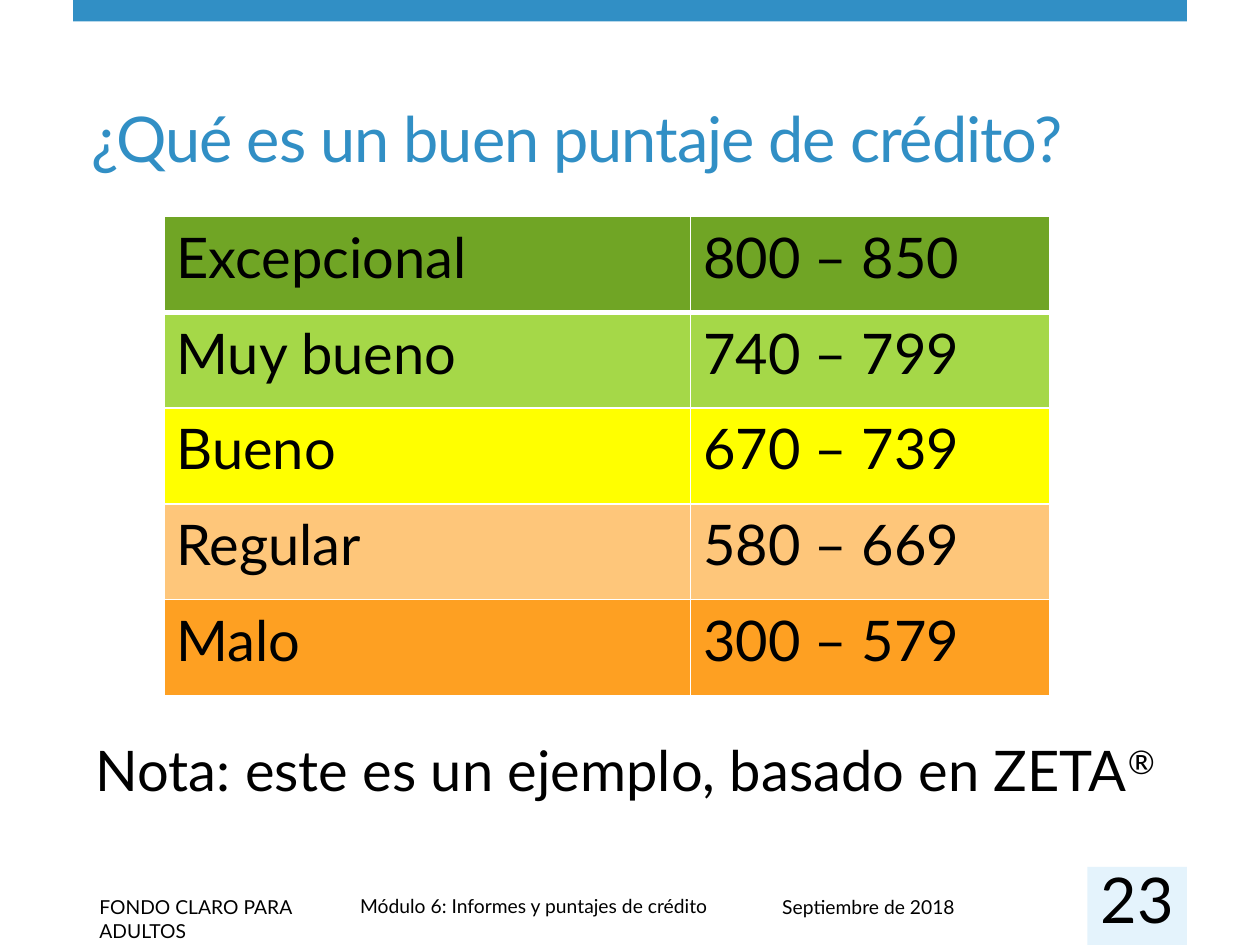
from lxml.etree import SubElement as Sub
from pptx import Presentation
from pptx.dml.color import RGBColor as RGB
from pptx.enum.shapes import MSO_SHAPE as Shape
from pptx.enum.text import MSO_ANCHOR as Anchor, PP_ALIGN as Align
from pptx.oxml.ns import qn
from pptx.util import Inches, Pt

BLACK = RGB(0x00, 0x00, 0x00)
BLUE = RGB(0x31, 0x8F, 0xC5)
PALE = RGB(0xE4, 0xF3, 0xFC)
GREEN = RGB(0x70, 0xA5, 0x25)
LIME = RGB(0xA5, 0xD8, 0x48)
YELLOW = RGB(0xFF, 0xFF, 0x00)
PEACH = RGB(0xFE, 0xC6, 0x7A)
ORANGE = RGB(0xFE, 0xA0, 0x22)

SCORES = [
    ("Excepcional", "800 – 850", GREEN),
    ("Muy bueno", "740 – 799", LIME),
    ("Bueno", "670 – 739", YELLOW),
    ("Regular", "580 – 669", PEACH),
    ("Malo", "300 – 579", ORANGE),
]


class Page:
    font = "Lato"

    def __init__(self, slide):
        self.slide = slide

    def style(self, run, size, color=BLACK):
        run.font.name = self.font
        run.font.size = Pt(size)
        run.font.color.rgb = color

    def rect(self, x, y, w, h, color):
        box = self.slide.shapes.add_shape(
            Shape.RECTANGLE, Inches(x), Inches(y), Inches(w), Inches(h))
        box.shadow.inherit = False
        box.fill.solid()
        box.fill.fore_color.rgb = color
        box.line.fill.background()

    def text(self, x, y, w, h, words, size, color=BLACK):
        box = self.slide.shapes.add_textbox(
            Inches(x), Inches(y), Inches(w), Inches(h))
        frame = box.text_frame
        frame.word_wrap = True
        frame.text = words
        self.style(frame.paragraphs[0].runs[0], size, color)
        return frame

    def edge(self, cell, side, width):
        line = Sub(cell._tc.get_or_add_tcPr(), qn("a:ln" + side),
                   w=str(Pt(width)))
        fill = Sub(line, qn("a:solidFill"))
        Sub(fill, qn("a:srgbClr"), val="FFFFFF")

    def table(self, x, y, cols, high, rows, size):
        grid = self.slide.shapes.add_table(
            len(rows), len(cols), Inches(x), Inches(y),
            Inches(sum(cols)), Inches(high * len(rows))).table
        for col, wide in zip(grid.columns, cols):
            col.width = Inches(wide)
        for r, (*words, color) in enumerate(rows):
            grid.rows[r].height = Inches(high)
            for c, word in enumerate(words):
                cell = grid.cell(r, c)
                cell.text = word
                run = cell.text_frame.paragraphs[0].runs[0]
                self.style(run, size)
                run.font.bold = False
                # A thick rule sits under the first row
                top = 3 if r == 1 else 1
                low = 3 if r == 0 else 1
                for side, width in zip("LRTB", (1, 1, top, low)):
                    self.edge(cell, side, width)
                cell.fill.solid()
                cell.fill.fore_color.rgb = color


def main():
    deck = Presentation()
    deck.slide_width, deck.slide_height = Inches(10), Inches(7.5)
    page = Page(deck.slides.add_slide(deck.slide_layouts[6]))

    # Top bar and number tile
    page.rect(8.63, 6.88, 0.79, 0.62, PALE)
    page.rect(0.58, 0, 8.84, 0.17, BLUE)

    # Footer
    page.text(6.11, 7.06, 2.52, 0.29, "Septiembre de 2018", 11)
    page.text(0.69, 7.06, 2.09, 0.29, "FONDO CLARO PARA ADULTOS", 11)
    page.text(2.76, 7.05, 5.66, 0.29,
              "Módulo 6: Informes y puntajes de crédito", 11)

    # Title
    title = page.text(0.63, 0.48, 8.2, 0.96,
                      "¿Qué es un buen puntaje de crédito?", 36, BLUE)
    title.vertical_anchor = Anchor.BOTTOM
    title.paragraphs[0].runs[0]._r.get_or_add_rPr().set("spc", "-60")

    # Score ranges
    page.table(1.3, 1.72, (4.18, 2.85), 0.76, SCORES, 32)

    # Note with a raised mark
    note = page.text(0.63, 5.79, 9.26, 0.91,
                     "Nota: este es un ejemplo, basado en ZETA", 32)
    note.margin_left = Inches(0.13)
    para = note.paragraphs[0]
    para.space_after = Pt(18)
    mark = para.add_run()
    mark.text = "®"
    page.style(mark, 32)
    mark._r.get_or_add_rPr().set("baseline", "30000")

    # Page number
    num = page.text(8.63, 6.83, 0.79, 0.45, "23", 36)
    num.margin_left = num.margin_right = 0
    num.margin_top = num.margin_bottom = 0
    num.paragraphs[0].alignment = Align.CENTER

    deck.save("out.pptx")


if __name__ == "__main__":
    main()
